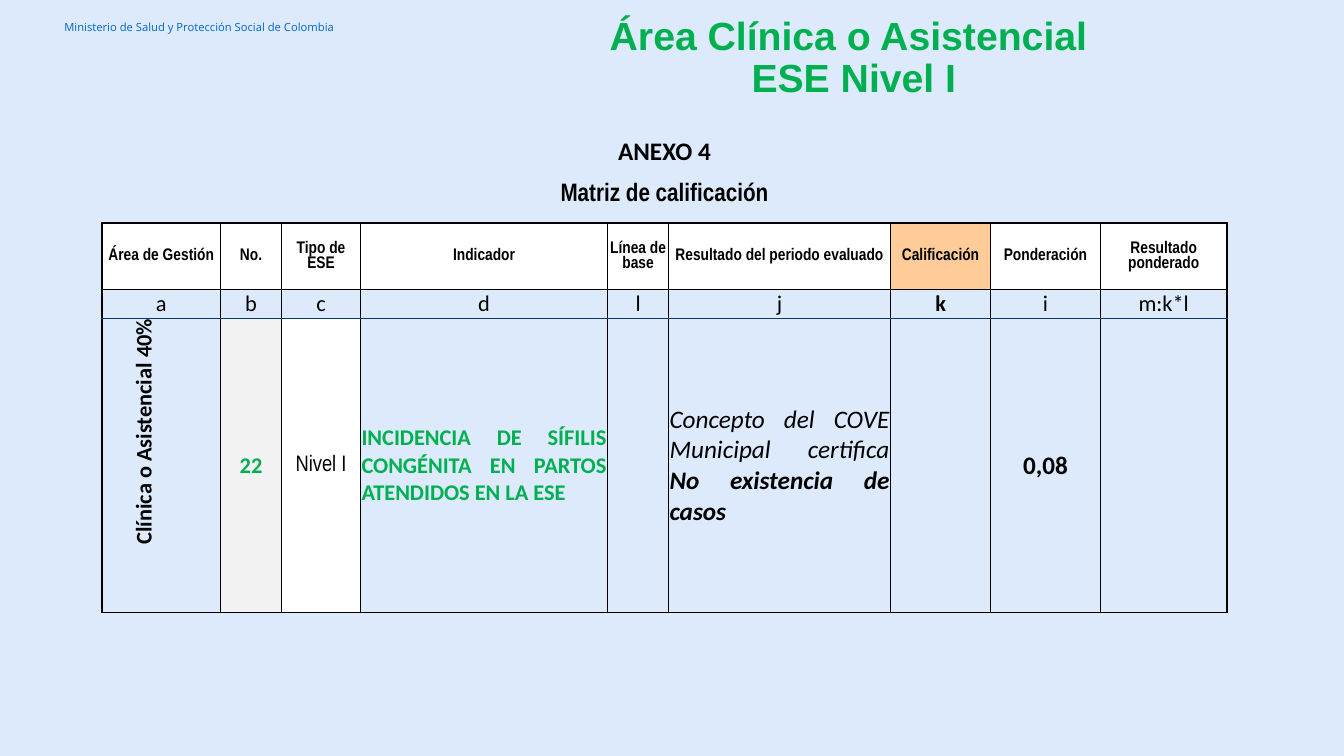
from lxml import etree
from pptx import Presentation
from pptx.dml.color import RGBColor
from pptx.enum.text import MSO_ANCHOR, MSO_AUTO_SIZE, PP_ALIGN
from pptx.oxml.ns import qn
from pptx.util import Inches, Pt

CENTER, RIGHT, JUSTIFY = PP_ALIGN.CENTER, PP_ALIGN.RIGHT, PP_ALIGN.JUSTIFY
MIDDLE = MSO_ANCHOR.MIDDLE
NO_AUTOFIT = MSO_AUTO_SIZE.NONE

TITLE_ONLY_LAYOUT = 5
PLAIN_TABLE_STYLE = "{2D5ABB26-0587-4C30-8999-92F81FD0307C}"
BLACK, GREEN, WHITE, NAVY = "000000", "00B050", "FFFFFF", "073763"
THICK, MEDIUM, THIN, NAVY_LINE = (BLACK, 1.5), (BLACK, 1), (BLACK, 0.5), (NAVY, 0.75)

# Shares of the slide's width and height, in percent
COLUMN_SHARES = [8.82, 4.54, 5.88, 18.38, 4.54, 16.52, 7.44, 8.18, 9.41]
ROW_SHARES = [4.13, 7.47, 8.8, 3.8, 38.93]
LAST_COLUMN = len(COLUMN_SHARES) - 1
ROW_LINES = [(None, None), (None, THICK), (THICK, THIN), (THIN, NAVY_LINE), (NAVY_LINE, MEDIUM)]

HEADINGS = ["Área de Gestión", "No.", "Tipo de ESE", "Indicador", "Línea de base",
            "Resultado del periodo evaluado", "Calificación", "Ponderación",
            "Resultado ponderado"]
LETTERS = ["a", "b", "c", "d", "l", "j", "k", "i", "m:k*l"]
RATING_COLUMN = HEADINGS.index("Calificación")


def color(hex_code):
    return RGBColor.from_string(hex_code)


def write(paragraph, text, font="Calibri", size=16, ink=BLACK, bold=False, italic=False,
          align=None, spacing=None):
    run = paragraph.add_run()
    run.text = text
    run.font.name, run.font.size = font, Pt(size)
    run.font.bold, run.font.italic = bold, italic
    run.font.color.rgb = color(ink)
    if align is not None:
        paragraph.alignment = align
    if spacing is not None:
        paragraph.line_spacing = spacing


class MatrixSlide:
    def __init__(self, background):
        self.deck = Presentation()
        self.deck.slide_width, self.deck.slide_height = Inches(13.33), Inches(7.5)
        self.slide = self.deck.slides.add_slide(self.deck.slide_layouts[TITLE_ONLY_LAYOUT])
        self.slide.background.fill.solid()
        self.slide.background.fill.fore_color.rgb = color(background)

    def across(self, share):
        return round(self.deck.slide_width * share / 100)

    def down(self, share):
        return round(self.deck.slide_height * share / 100)

    def area(self, left, top, width, height):
        return self.across(left), self.down(top), self.across(width), self.down(height)

    def title(self, lines, area, **style):
        heading = self.slide.shapes.title
        heading.left, heading.top, heading.width, heading.height = self.area(*area)
        frame = heading.text_frame
        frame.auto_size, frame.vertical_anchor = NO_AUTOFIT, MIDDLE
        for index, line in enumerate(lines):
            paragraph = frame.add_paragraph() if index else frame.paragraphs[0]
            paragraph.space_before = Pt(0)
            write(paragraph, line, **style)

    def label(self, text, area, **style):
        frame = self.slide.shapes.add_textbox(*self.area(*area)).text_frame
        frame.word_wrap, frame.vertical_anchor = True, MIDDLE
        write(frame.paragraphs[0], text, **style)

    def table(self, left, top):
        area = self.area(left, top, sum(COLUMN_SHARES), sum(ROW_SHARES))
        frame = self.slide.shapes.add_table(len(ROW_SHARES), len(COLUMN_SHARES), *area)
        self.matrix = frame.table
        self.matrix.first_row = self.matrix.horz_banding = False
        frame._element.find(".//" + qn("a:tableStyleId")).text = PLAIN_TABLE_STYLE
        for column, share in zip(self.matrix.columns, COLUMN_SHARES):
            column.width = self.across(share)
        for index, (row, share) in enumerate(zip(self.matrix.rows, ROW_SHARES)):
            row.height = self.down(share)
            for position, cell in enumerate(row.cells):
                cell.fill.background()
                self.borders(cell, index, position)

    def borders(self, cell, row, column):
        upper, lower = ROW_LINES[row]
        left = right = None
        if row > 1:
            left = THICK if column == 0 else THIN
            right = THICK if column == LAST_COLUMN else THIN
        properties = cell._tc.get_or_add_tcPr()
        sides = {"lnL": left, "lnR": right, "lnT": upper, "lnB": lower}
        for index, (side, line) in enumerate(sides.items()):
            border = etree.Element(qn("a:" + side))
            if line:
                ink, weight = line
                border.set("w", str(Pt(weight)))
                fill = etree.SubElement(border, qn("a:solidFill"))
                etree.SubElement(fill, qn("a:srgbClr"), val=ink)
            else:
                etree.SubElement(border, qn("a:noFill"))
            properties.insert(index, border)

    def cell(self, row, column, *texts, fill=None, top=0.01, turned=False, **style):
        """Fill one cell; each text is a string or a pair of string and own format."""
        cell = self.matrix.cell(row, column)
        cell.margin_left = cell.margin_right = Inches(0.01)
        cell.margin_top, cell.margin_bottom = Inches(top), 0
        cell.vertical_anchor = MIDDLE
        if fill:
            cell.fill.solid()
            cell.fill.fore_color.rgb = color(fill)
        if turned:
            cell._tc.get_or_add_tcPr().set("vert", "vert270")
        for item in texts:
            text, own = (item, {}) if isinstance(item, str) else item
            write(cell.text_frame.paragraphs[0], text, **{"align": CENTER, **style, **own})

    def banner(self, row, text, **style):
        self.matrix.cell(row, 0).merge(self.matrix.cell(row, LAST_COLUMN))
        self.cell(row, 0, text, **style)


def main():
    page = MatrixSlide("DCEAFB")
    page.label("Ministerio de Salud y Protección Social de Colombia",
               (4.05, 1.87, 23.4, 3.47), font="Open Sans", size=8, ink="0066CD")
    page.title(["Área Clínica o Asistencial ", "ESE Nivel I"], (31.58, 3.07, 63.9, 9.33),
               font="Arial", size=28, ink=GREEN, bold=True, align=CENTER, spacing=0.9)

    page.table(7.59, 17.87)
    page.banner(0, "ANEXO 4", size=18, bold=True)
    page.banner(1, "Matriz de calificación", font="Arial Narrow", size=18, bold=True)
    for column, (heading, letter) in enumerate(zip(HEADINGS, LETTERS)):
        rating = column == RATING_COLUMN
        page.cell(2, column, heading, fill="FFCC99" if rating else WHITE,
                  font="Arial Narrow", size=12, bold=True)
        page.cell(3, column, letter, bold=rating)

    page.cell(4, 0, "Clínica o Asistencial 40%", top=0.28, turned=True, bold=True, align=RIGHT)
    page.cell(4, 1, "22", fill="F2F2F2", ink=GREEN, bold=True)
    page.cell(4, 2, "Nivel I", fill=WHITE, font="Arial Narrow")
    page.cell(4, 3, "INCIDENCIA DE SÍFILIS CONGÉNITA EN PARTOS ATENDIDOS EN LA ESE",
              ink=GREEN, bold=True, align=JUSTIFY)
    page.cell(4, 5, "Concepto del COVE Municipal certifica ",
              ("No existencia de casos", {"bold": True}),
              size=18, italic=True, align=JUSTIFY)
    page.cell(4, 7, "0,08", size=18, bold=True)
    page.deck.save("out.pptx")


if __name__ == "__main__":
    main()
